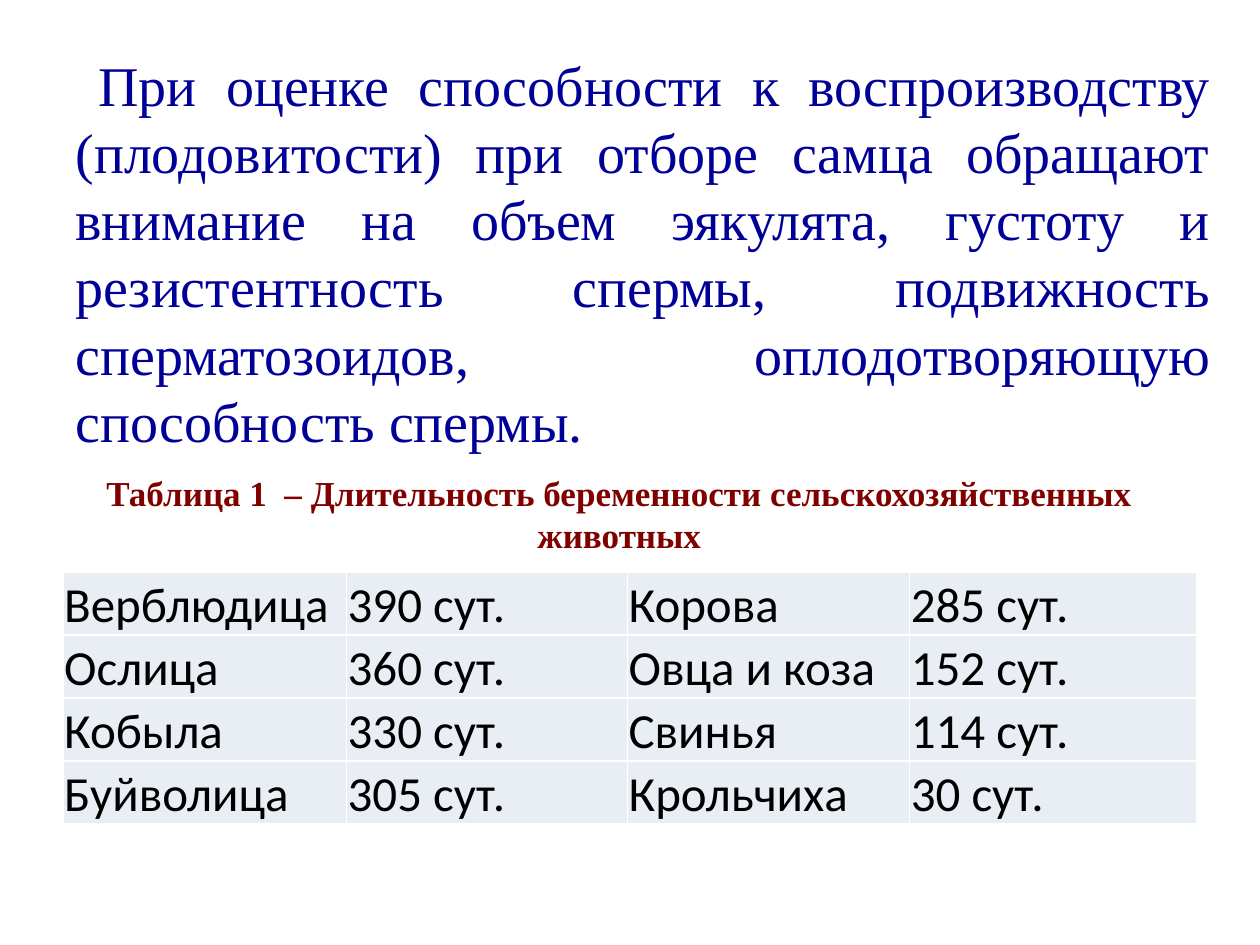
import lxml.etree
import pptx
import pptx.dml.color
import pptx.enum.text
import pptx.oxml.ns
import pptx.util

Inches = pptx.util.Inches
RGBColor = pptx.dml.color.RGBColor
Align = pptx.enum.text.PP_ALIGN
Anchor = pptx.enum.text.MSO_ANCHOR

BLACK = RGBColor(0x00, 0x00, 0x00)
NAVY = RGBColor(0x00, 0x00, 0x99)
MAROON = RGBColor(0x80, 0x00, 0x00)
WHITE = RGBColor(0xFF, 0xFF, 0xFF)
PALE_BLUE = RGBColor(0xE9, 0xED, 0xF4)
SERIF = "Times New Roman"
SANS = "Calibri"

INTRODUCTION = (
    "При оценке способности к воспроизводству (плодовитости) при отборе самца "
    "обращают внимание на объем эякулята, густоту и резистентность спермы, "
    "подвижность сперматозоидов, оплодотворяющую способность спермы."
)
CAPTION = "Таблица 1  – Длительность беременности сельскохозяйственных животных"
PREGNANCY_ROWS = [
    ("Верблюдица", "390 сут.", "Корова", "285 сут."),
    ("Ослица", "360 сут.", "Овца и коза", "152 сут."),
    ("Кобыла", "330 сут.", "Свинья", "114 сут."),
    ("Буйволица", "305 сут.", "Крольчиха", "30 сут."),
]


def write(para, text, *, size, font=SERIF, color=BLACK, bold=False, align=Align.JUSTIFY):
    para.alignment = align
    span = para.add_run()
    span.text = text
    span.font.size = pptx.util.Pt(size)
    span.font.name = font
    span.font.color.rgb = color
    span.font.bold = bold


class SlideBuilder:
    def __init__(self, page):
        self.page = page
        self.cell_size = 28
        self.cell_spacing = 1.07
        self.cell_inset = Inches(0.01)
        self.border_width = pptx.util.Pt(1)

    def text_box(self, left, top, width, height, anchor=Anchor.TOP):
        box = self.page.shapes.add_textbox(
            Inches(left), Inches(top), Inches(width), Inches(height)
        )
        frame = box.text_frame
        frame.word_wrap = True
        frame.auto_size = pptx.enum.text.MSO_AUTO_SIZE.SHAPE_TO_FIT_TEXT
        frame.vertical_anchor = anchor
        return frame.paragraphs[0]

    def borders(self, cell):
        properties = cell._tc.get_or_add_tcPr()
        qn = pptx.oxml.ns.qn
        for side in ("a:lnL", "a:lnR", "a:lnT", "a:lnB"):
            line = lxml.etree.SubElement(properties, qn(side), w=str(self.border_width))
            fill = lxml.etree.SubElement(line, qn("a:solidFill"))
            lxml.etree.SubElement(fill, qn("a:srgbClr"), val=str(WHITE))

    def cell(self, cell, text):
        self.borders(cell)
        cell.fill.solid()
        cell.fill.fore_color.rgb = PALE_BLUE
        cell.vertical_anchor = Anchor.MIDDLE
        cell.margin_left = cell.margin_right = self.cell_inset
        cell.margin_top = cell.margin_bottom = 0
        para = cell.text_frame.paragraphs[0]
        para.line_spacing = self.cell_spacing
        write(para, text, size=self.cell_size, font=SANS)

    def table(self, left, top, column_widths, row_height, rows):
        table = self.page.shapes.add_table(
            len(rows), len(column_widths), Inches(left), Inches(top),
            Inches(sum(column_widths)), Inches(row_height * len(rows)),
        ).table
        table.first_row = False
        table.horz_banding = False
        for column, width in zip(table.columns, column_widths):
            column.width = Inches(width)
        for row, texts in zip(table.rows, rows):
            row.height = Inches(row_height)
            for cell, text in zip(row.cells, texts):
                self.cell(cell, text)


def main():
    deck = pptx.Presentation()
    deck.slide_width = Inches(10)
    deck.slide_height = Inches(7.5)
    builder = SlideBuilder(deck.slides.add_slide(deck.slide_layouts[6]))

    introduction = builder.text_box(0.5, 0.35, 9.21, 3.33)
    write(introduction, " ", size=18)
    write(introduction, INTRODUCTION, size=32, color=NAVY)

    builder.table(0.5, 4.54, (2.25, 2.23, 2.24, 2.28), 0.48, PREGNANCY_ROWS)

    caption = builder.text_box(0.5, 3.69, 8.83, 0.77, anchor=Anchor.MIDDLE)
    write(caption, CAPTION, size=20, color=MAROON, bold=True, align=Align.CENTER)

    deck.save("out.pptx")


if __name__ == "__main__":
    main()
